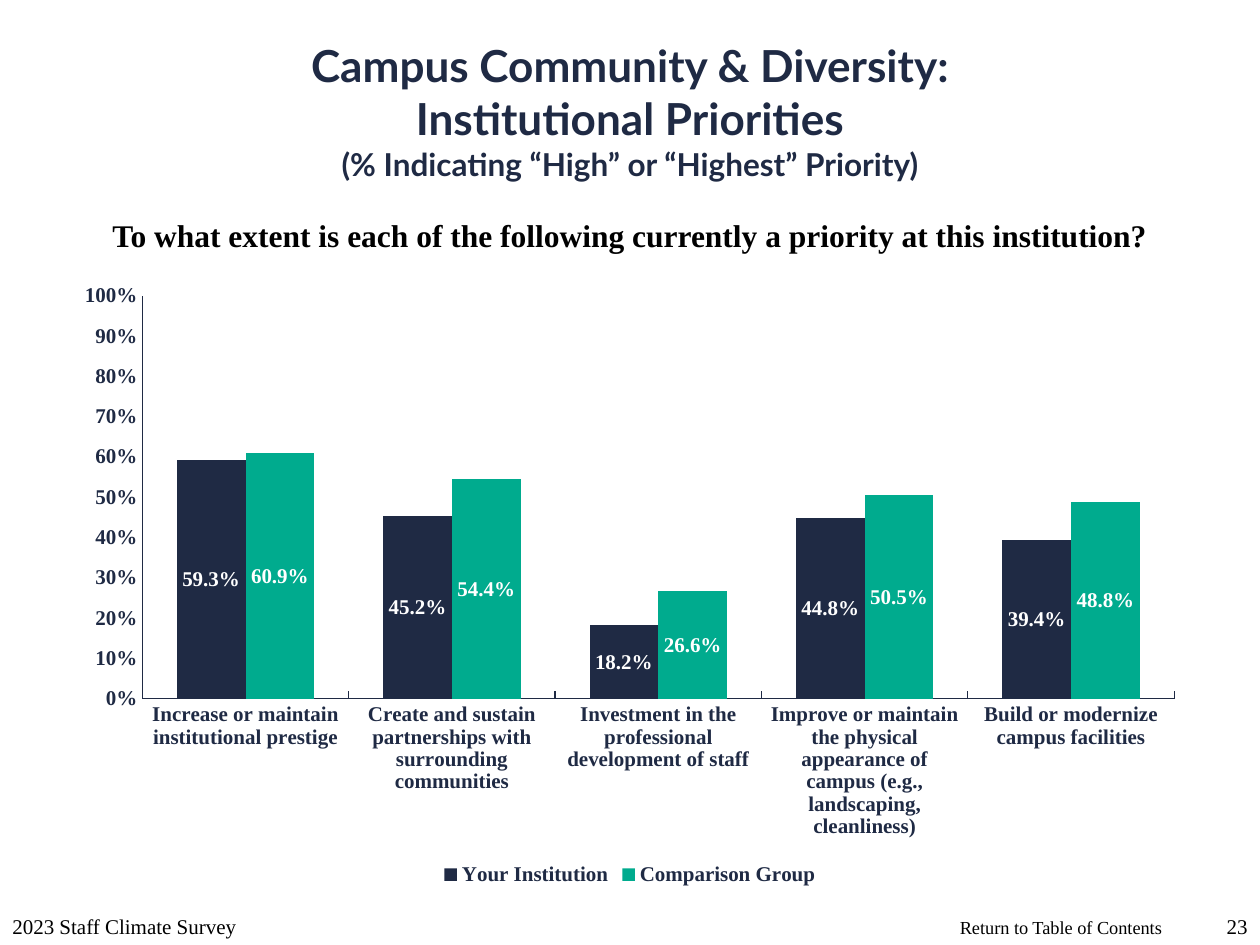
import pptx
import pptx.chart.data
import pptx.dml.color
import pptx.enum.chart
import pptx.enum.text
import pptx.oxml
import pptx.util
from dataclasses import dataclass

Cm, Pt = pptx.util.Cm, pptx.util.Pt
Align, Anchor = pptx.enum.text.PP_ALIGN, pptx.enum.text.MSO_ANCHOR
Enum = pptx.enum.chart


@dataclass(frozen=True)
class Theme:
    navy: str = "1F2A44"
    green: str = "00AB8E"
    black: str = "000000"
    white: str = "FFFFFF"
    head: str = "Lato"
    body: str = "Times New Roman"
    title: float = 25.2
    sub: float = 18
    note: float = 12
    link: float = 10.5


THEME = Theme()

CATS = [
    "Increase or maintain institutional prestige",
    "Create and sustain partnerships with surrounding communities",
    "Investment in the professional development of staff",
    "Improve or maintain the physical appearance of campus "
    "(e.g., landscaping, cleanliness)",
    "Build or modernize campus facilities",
]
SERIES = [
    ("Your Institution", THEME.navy, [0.593, 0.452, 0.182, 0.448, 0.394]),
    ("Comparison Group", THEME.green, [0.609, 0.544, 0.266, 0.505, 0.488]),
]


def rgb(color):
    return pptx.dml.color.RGBColor.from_string(color)


def style(font, size=THEME.note, color=THEME.navy, bold=True, face=THEME.body):
    font.size, font.bold, font.name = Pt(size), bold, face
    font.color.rgb = rgb(color)


def add_text(slide, lines, box, size=THEME.note, color=THEME.black, bold=False,
             face=THEME.body, align=Align.LEFT, anchor=Anchor.TOP, wrap=True):
    """Write one paragraph; each line is a string or a (string, size) pair."""
    frame = slide.shapes.add_textbox(*map(Cm, box)).text_frame
    frame.word_wrap, frame.vertical_anchor = wrap, anchor
    para = frame.paragraphs[0]
    para.alignment = align
    for num, line in enumerate([lines] if isinstance(lines, str) else lines):
        words, pts = (line, size) if isinstance(line, str) else line
        if num:
            para.add_line_break()
        run = para.add_run()
        run.text = words
        style(run.font, pts, color, bold, face)


def set_axis(axis, tick):
    axis.has_major_gridlines = False
    axis.major_tick_mark = tick
    axis.minor_tick_mark = Enum.XL_TICK_MARK.NONE
    axis.format.line.color.rgb = rgb(THEME.navy)
    axis.format.line.width = Pt(0.75)
    style(axis.tick_labels.font)


def set_plot(chart, left, top, width, height):
    """Fix the inner plot area, as fractions of the chart."""
    area = chart.plots[0]._element.getparent()
    for old in area.findall(pptx.oxml.ns.qn("c:layout")):
        area.remove(old)
    sizes = zip("xywh", (left, top, width, height))
    tags = "".join(f'<c:{key} val="{val}"/>' for key, val in sizes)
    area.insert(0, pptx.oxml.parse_xml(
        f'<c:layout {pptx.oxml.ns.nsdecls("c")}><c:manualLayout>'
        '<c:layoutTarget val="inner"/><c:xMode val="edge"/>'
        f'<c:yMode val="edge"/>{tags}</c:manualLayout></c:layout>'))


def add_bars(slide, box):
    data = pptx.chart.data.CategoryChartData(number_format="0.0%")
    data.categories = CATS
    for name, _, vals in SERIES:
        data.add_series(name, vals)
    chart = slide.shapes.add_chart(
        Enum.XL_CHART_TYPE.COLUMN_CLUSTERED, *map(Cm, box), data).chart
    style(chart.font)
    chart.has_title = False

    # Axes
    set_axis(chart.category_axis, Enum.XL_TICK_MARK.INSIDE)
    axis = chart.value_axis
    set_axis(axis, Enum.XL_TICK_MARK.NONE)
    axis.minimum_scale, axis.maximum_scale, axis.major_unit = 0, 1, 0.1
    axis.tick_labels.number_format = "0%"
    axis.tick_labels.number_format_is_linked = False

    # Legend
    chart.has_legend = True
    chart.legend.position = Enum.XL_LEGEND_POSITION.BOTTOM
    chart.legend.include_in_layout = False
    style(chart.legend.font)

    # Columns and their labels
    plot = chart.plots[0]
    plot.gap_width, plot.overlap, plot.vary_by_categories = 100, 0, False
    for bars, (_, color, _) in zip(plot.series, SERIES):
        bars.format.fill.solid()
        bars.format.fill.fore_color.rgb = rgb(color)
        tags = bars.data_labels
        tags.show_value = True
        tags.position = Enum.XL_LABEL_POSITION.CENTER
        tags.number_format, tags.number_format_is_linked = "0.0%", False
        style(tags.font, color=THEME.white)
    set_plot(chart, 0.07, 0.04, 0.91, 0.65)


def main():
    deck = pptx.Presentation()
    deck.slide_width, deck.slide_height = Cm(25.4), Cm(19.05)
    slide = deck.slides.add_slide(deck.slide_layouts[6])

    # Heading and question
    add_text(slide,
             ["Campus Community & Diversity:", "Institutional Priorities",
              ("(% Indicating “High” or “Highest” Priority)", THEME.sub)],
             (0, 0.64, 25.4, 3.18), size=THEME.title, color=THEME.navy,
             bold=True, face=THEME.head, align=Align.CENTER,
             anchor=Anchor.MIDDLE)
    add_text(slide, "To what extent is each of the following currently "
             "a priority at this institution?", (0, 4.24, 25.4, 1.02),
             size=THEME.sub, bold=True, align=Align.CENTER)

    # Chart
    add_bars(slide, (1.27, 5.46, 22.86, 12.5))

    # Footer
    add_text(slide, "2023 Staff Climate Survey", (0, 17.78, 8.05, 1.27),
             anchor=Anchor.BOTTOM)
    add_text(slide, "Return to Table of Contents", (19.1, 18.34, 4.62, 0.71),
             size=THEME.link, wrap=False)
    add_text(slide, "23", (24.13, 17.78, 1.27, 1.27), align=Align.RIGHT,
             anchor=Anchor.BOTTOM)

    deck.save("out.pptx")


if __name__ == "__main__":
    main()
